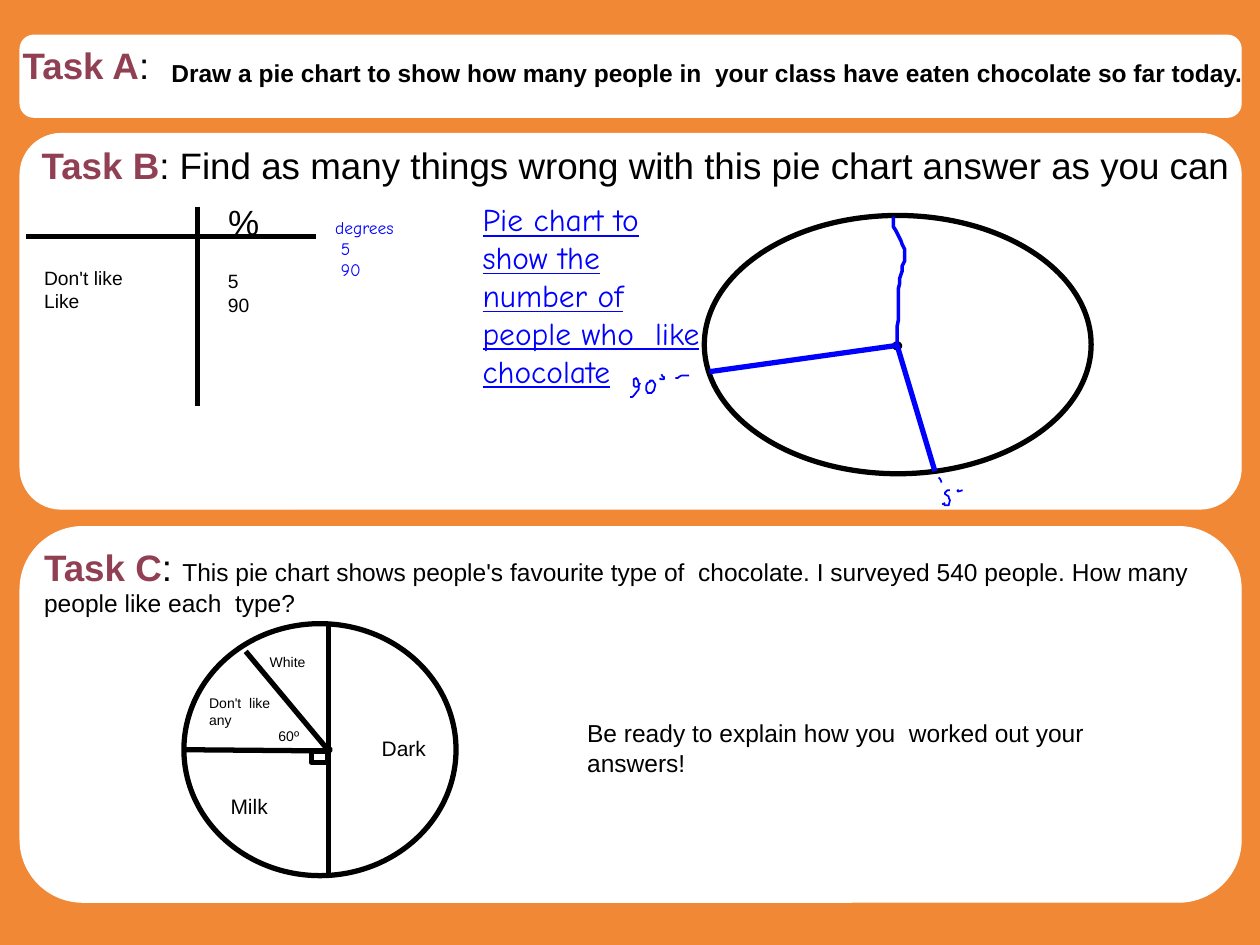
import pptx
import pptx.util
import pptx.dml.color
import pptx.enum.shapes
import pptx.enum.text
import pptx.oxml

Inches, Pt = pptx.util.Inches, pptx.util.Pt
RGBColor = pptx.dml.color.RGBColor
MSO_SHAPE = pptx.enum.shapes.MSO_SHAPE

ORANGE = RGBColor(0xF1, 0x88, 0x35)
WHITE = RGBColor(0xFF, 0xFF, 0xFF)
BLACK = RGBColor(0, 0, 0)
BLUE = RGBColor(0, 0, 0xFF)
PLUM = RGBColor(0x91, 0x3F, 0x53)

prs = pptx.Presentation()
prs.slide_width, prs.slide_height = Inches(10), Inches(7.5)
s = prs.slides.add_slide(prs.slide_layouts[6])
s.background.fill.solid()
s.background.fill.fore_color.rgb = ORANGE


def outline(sp, color, width):
    """Give a shape or connector a plain line, with no fill and no shadow."""
    sp.line.color.rgb = color
    sp.line.width = Pt(width)
    if hasattr(sp, "fill"):
        sp.fill.background()
        sp.shadow.inherit = False
    else:
        sp._element.spPr.append(pptx.oxml.parse_xml(
            '<a:effectLst xmlns:a="http://schemas.openxmlformats.org/drawingml/2006/main"/>'))


def add_text(box, lines, size, color=BLACK, font="Arial"):
    """Add a wrapping text box with one paragraph per line."""
    sp = s.shapes.add_textbox(*map(Inches, box))
    tf = sp.text_frame
    tf.word_wrap = True
    tf.auto_size = pptx.enum.text.MSO_AUTO_SIZE.SHAPE_TO_FIT_TEXT
    tf.margin_left = tf.margin_right = Inches(0.08)
    tf.margin_top = tf.margin_bottom = Inches(0.04)
    for i, line in enumerate(lines):
        p = tf.add_paragraph() if i else tf.paragraphs[0]
        p.add_run().text = line
        p.font.name, p.font.size, p.font.color.rgb = font, Pt(size), color
    return tf.paragraphs[0]


# White panels
for top, height, corner in [(4.18, 2.98, 0.167), (1.06, 2.98, 0.109), (0.28, 0.65, 0.167)]:
    sp = s.shapes.add_shape(MSO_SHAPE.ROUNDED_RECTANGLE,
                            Inches(0.16), Inches(top), Inches(9.69), Inches(height))
    sp.adjustments[0] = corner
    outline(sp, WHITE, 0.75)
    sp.fill.solid()
    sp.fill.fore_color.rgb = WHITE

# Task headings: name, large text, small text
headings = [
    ((0.1, 0.3, 2.27, 0.38), "Task A", ":", ""),
    ((0.25, 1.09, 9.69, 0.68), "Task B",
     ": Find as many things wrong with this pie chart answer as you can", ""),
    ((0.27, 4.28, 9.69, 0.59), "Task C", ": ",
     "This pie chart shows people's favourite type of  chocolate. I surveyed 540 people. "
     "How many people like each  type?"),
]
for box, name, large, small in headings:
    p = add_text(box, [name], 21)
    p.runs[0].font.bold = True
    p.runs[0].font.color.rgb = PLUM
    p.add_run().text = large
    if small:
        r = p.add_run()
        r.text = small
        r.font.size = Pt(14)

p = add_text((1.28, 0.42, 8.68, 0.45),
             ["Draw a pie chart to show how many people in  your class "
              "have eaten chocolate so far today."], 14)
p.font.bold = True

# Task B: pie chart and handwritten marks, grouped
pie_b = s.shapes.add_group_shape()

# Strokes in hundredths of an inch
radius_stroke = [(712, 274), (712, 259), (713, 254), (713, 229), (714, 225), (714, 221),
                 (715, 218), (716, 215), (716, 211), (718, 207), (718, 198), (716, 194),
                 (715, 191), (713, 187), (711, 183), (709, 180), (709, 172)]
pen_strokes = [
    # tick and dash around 5
    [(745, 379), (746, 380), (747, 382), (747, 383)],
    [(754, 389), (752, 389), (751, 390), (750, 391), (750, 392), (753, 394), (753, 395),
     (754, 397), (753, 401), (750, 401), (749, 400), (748, 400), (749, 400), (750, 399)],
    [(761, 389), (760, 389), (760, 390), (761, 390), (764, 389)],
    # 9, 0, degree sign and dash
    [(508, 304), (507, 306), (506, 307), (504, 307), (503, 306), (503, 301), (505, 300),
     (505, 301), (506, 301), (507, 305), (507, 309), (503, 314), (502, 315), (500, 315)],
    [(517, 303), (516, 302), (516, 303), (514, 304), (513, 306), (513, 310), (514, 311),
     (514, 312), (517, 312), (518, 311), (519, 310), (520, 306), (520, 305), (518, 302),
     (516, 302)],
    [(524, 300), (524, 301), (527, 301), (527, 299), (526, 299), (525, 297)],
    [(536, 300), (538, 300), (539, 299), (541, 298), (547, 298)],
]
right_angle = [(247, 596), (260, 596), (260, 605), (247, 605)]

# Ellipses and straight lines of both pies, and the table rules
for shapes, box in [(pie_b.shapes, (7.1, 2.73, 0.04, 0.03)),
                    (pie_b.shapes, (5.59, 1.71, 3.07, 2.05)),
                    (s.shapes, (2.58, 5.94, 0.04, 0.02)),
                    (s.shapes, (1.46, 4.95, 2.16, 2))]:
    outline(shapes.add_shape(MSO_SHAPE.OVAL, *map(Inches, box)), BLACK, 3)

for shapes, ends, color in [(s.shapes, (0.21, 1.88, 2.51, 1.88), BLACK),
                            (s.shapes, (1.57, 1.64, 1.57, 3.22), BLACK),
                            (pie_b.shapes, (7.12, 2.74, 7.42, 3.74), BLUE),
                            (pie_b.shapes, (7.13, 2.74, 5.63, 2.95), BLUE),
                            (s.shapes, (2.61, 4.97, 2.61, 6.94), BLACK),
                            (s.shapes, (2.61, 5.96, 1.46, 5.95), BLACK),
                            (s.shapes, (2.61, 5.96, 1.95, 5.17), BLACK)]:
    line = shapes.add_connector(pptx.enum.shapes.MSO_CONNECTOR.STRAIGHT, *map(Inches, ends))
    outline(line, color, 3)

strokes = [(pie_b.shapes, radius_stroke, BLUE, 2, False)]
strokes += [(pie_b.shapes, points, BLUE, 1, False) for points in pen_strokes]
strokes.append((s.shapes, right_angle, BLACK, 3, True))
for shapes, points, color, width, closed in strokes:
    fb = shapes.build_freeform(*points[0], scale=Inches(0.01))
    fb.add_line_segments(points[1:], close=closed)
    outline(fb.convert_to_shape(), color, width)

# Table words, pie labels and closing instruction
for box, lines, size in [
    ((1.73, 1.55, 0.52, 0.36), ["%"], 20),
    ((0.27, 2.07, 1.2, 0.41), ["Don't like", "Like"], 11),
    ((1.73, 2.1, 0.4, 0.39), ["5", "90"], 11),
    ((2.13, 5.73, 0.35, 0.18), ["60º"], 8),
    ((1.75, 6.26, 0.6, 0.25), ["Milk"], 12),
    ((2.95, 5.8, 0.7, 0.25), ["Dark"], 12),
    ((2.06, 5.15, 0.62, 0.19), ["White"], 8),
    ((1.58, 5.47, 0.8, 0.32), ["Don't  like any"], 8),
    ((4.58, 5.66, 4.48, 0.5), ["Be ready to explain how you  worked out your answers!"], 14),
]:
    add_text(box, lines, size)

# Pupil's answer in blue
add_text((2.58, 1.68, 1.1, 0.51), ["degrees", " 5", " 90"], 10, BLUE, "Comic Neue")
p = add_text((3.75, 1.55, 1.97, 0.99),
             ["Pie chart to show the number of people who  like chocolate"],
             18, BLUE, "Comic Neue")
p.font.underline = True

prs.save("out.pptx")
